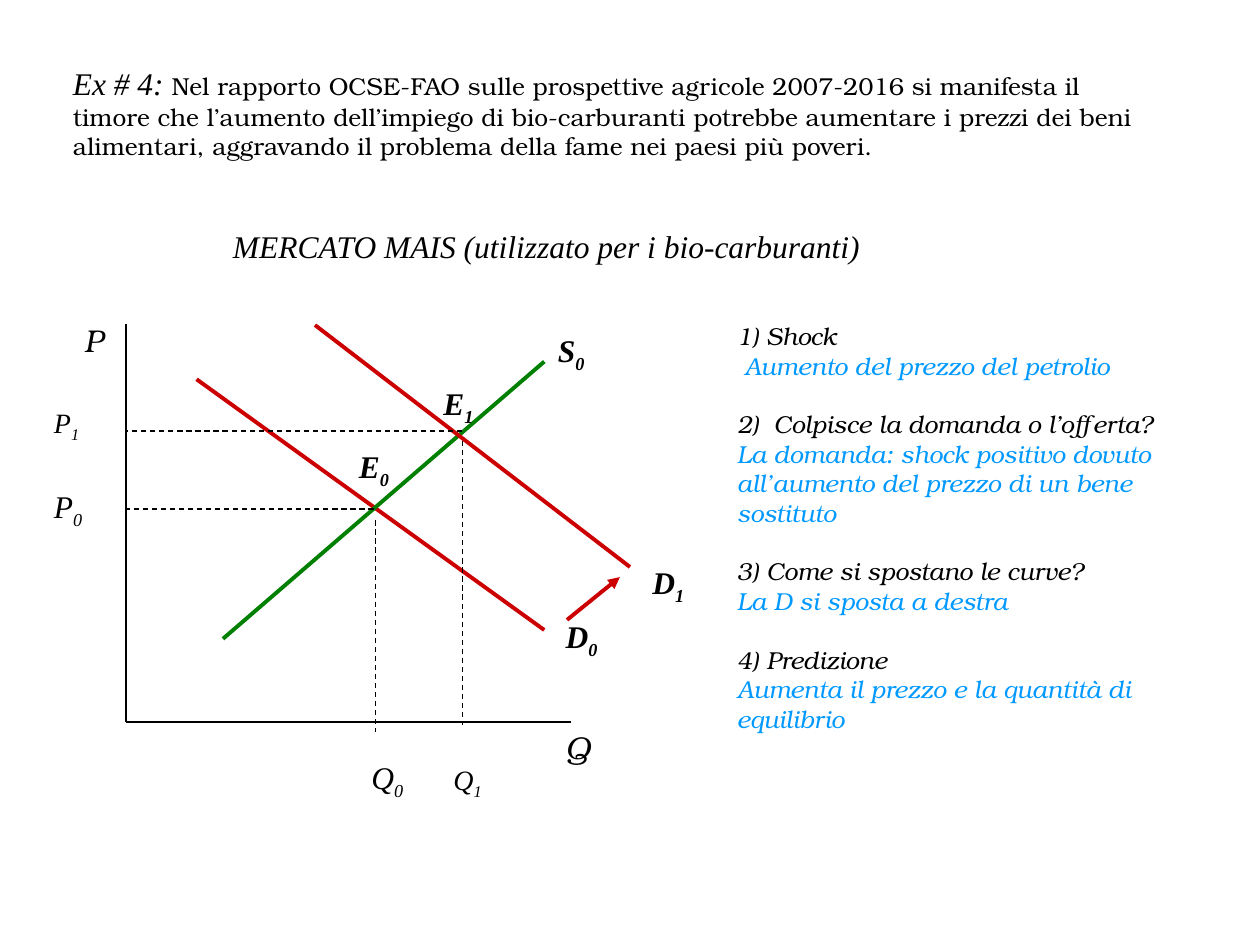
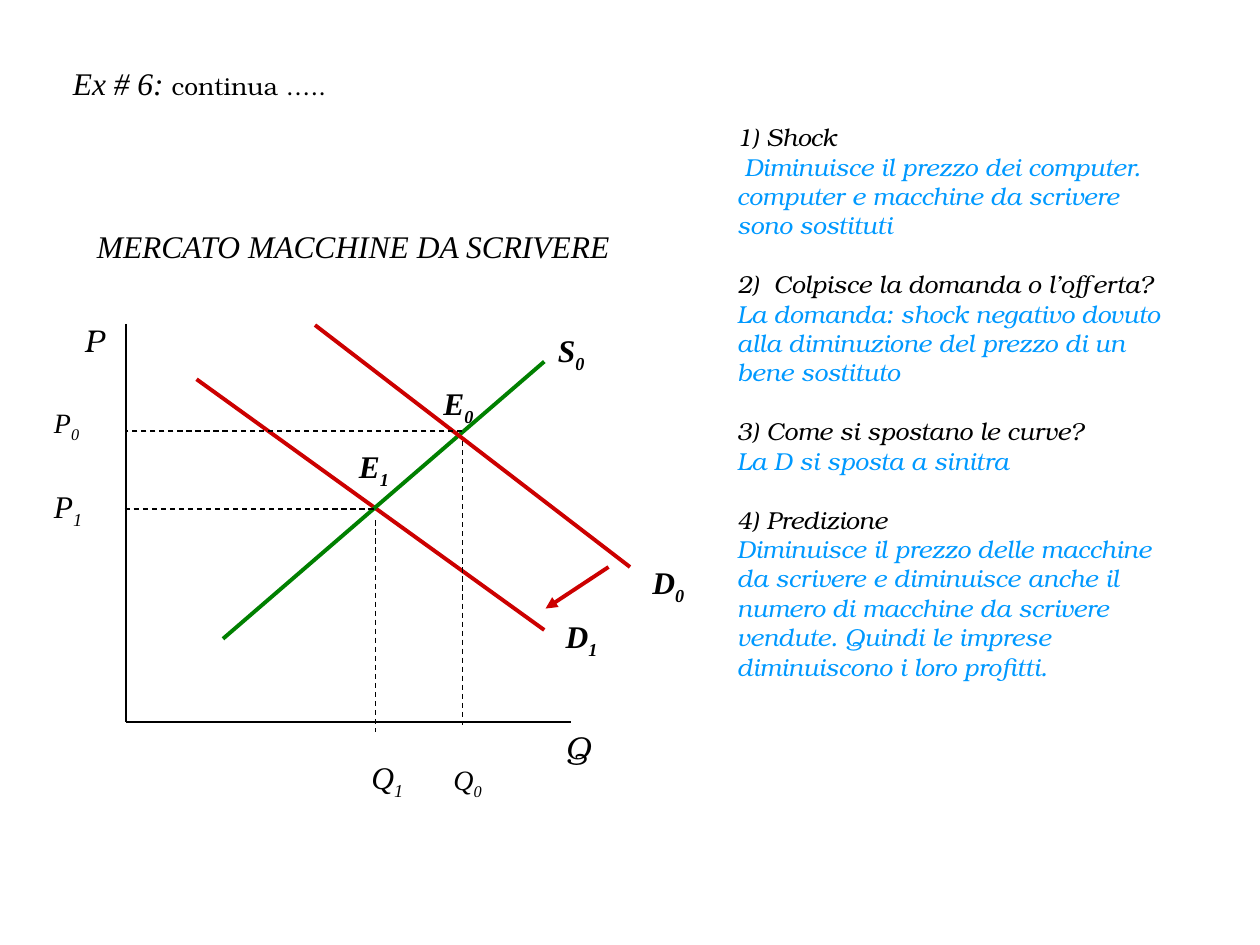
import pptx
import pptx.util
import pptx.dml.color
import pptx.enum.dml
import pptx.enum.shapes
import pptx.enum.text
import pptx.oxml
import pptx.oxml.ns

Inches, Pt = pptx.util.Inches, pptx.util.Pt
COLORS = {"ink": "000000", "answer": "0099FF", "demand": "CC0000", "supply": "008000"}
SERIF, BODY = "Times New Roman", "TeX Gyre Bonum"
BODY_SIZE, LABEL_SIZE, SMALL_SIZE = 14, 18, 16
QUESTION_GAP = 16.8

QUESTIONS = [
    "1) Shock",
    "2)  Colpisce la domanda o l’offerta?",
    "3) Come si spostano le curve?",
    "4) Predizione",
]

SLIDES = [
    {
        "exercise": "Ex # 4: ",
        "intro": "Nel rapporto OCSE-FAO sulle prospettive agricole 2007-2016 si manifesta il "
                 "timore che l’aumento dell’impiego di bio-carburanti potrebbe aumentare i prezzi "
                 "dei beni alimentari, aggravando il problema della fame nei paesi più poveri.",
        "intro_height": 0.87,
        "market": "MERCATO MAIS (utilizzato per i bio-carburanti)",
        "market_box": (1.75, 1.75, 5.19, 0.4),
        "answers": [
            [" Aumento del prezzo del petrolio"],
            ["La domanda: shock positivo dovuto all’aumento del prezzo di un bene sostituto"],
            ["La D si sposta a destra"],
            ["Aumenta il prezzo e la quantità di", "equilibrio"],
        ],
        "answers_box": (5.75, 2.5, 3.71, 3.36),
        "shift": ((4.5, 4.92), (4.92, 4.58)),
        "low": "0",
        "high": "1",
    },
    {
        "exercise": "Ex # 6: ",
        "intro": "continua …..",
        "intro_height": 0.4,
        "market": "MERCATO MACCHINE DA SCRIVERE",
        "market_box": (0.67, 1.75, 4.29, 0.4),
        "answers": [
            [" Diminuisce il prezzo dei computer. computer e macchine da scrivere sono sostituti"],
            ["La domanda: shock negativo dovuto alla diminuzione del prezzo di un bene sostituto"],
            ["La D si sposta a sinitra"],
            ["Diminuisce il prezzo delle macchine da scrivere e diminuisce anche il numero di "
             "macchine da scrivere vendute. Quindi le imprese diminuiscono i loro profitti."],
        ],
        "answers_box": (5.75, 0.92, 3.71, 4.52),
        "shift": ((4.83, 4.5), (4.33, 4.83)),
        "low": "1",
        "high": "0",
    },
]

AXES = [((1, 2.57), (1, 5.73)), ((1, 5.73), (4.53, 5.73))]
GUIDES = [
    ((2.98, 4.13), (2.98, 5.81)),
    ((0.99, 4.04), (2.98, 4.04)),
    ((3.67, 3.5), (3.67, 5.75)),
    ((3.67, 3.42), (1, 3.42)),
]
CURVES = [
    ((1.56, 3.01), (4.32, 5), "demand"),
    ((1.77, 5.07), (4.32, 2.87), "supply"),
    ((2.5, 2.58), (5, 4.5), "demand"),
]
AXIS_NAMES = [("P", 0.57, 2.5), ("Q", 4.39, 5.73)]
CURVE_LABELS = [
    ("S", "supply", (4.33, 2.58, 0.51, 0.4)),
    ("D", "low", (4.39, 4.85, 0.52, 0.4)),
    ("D", "high", (5.08, 4.42, 0.58, 0.4)),
    ("E", "low", (2.75, 3.5, 0.5, 0.4)),
    ("E", "high", (3.42, 3, 0.58, 0.4)),
]
VALUE_LABELS = [
    ("P", "low", (0.33, 3.82, 0.55, 0.4), LABEL_SIZE),
    ("Q", "low", (2.85, 5.97, 0.57, 0.4), LABEL_SIZE),
    ("P", "high", (0.33, 3.17, 0.41, 0.37), SMALL_SIZE),
    ("Q", "high", (3.5, 6, 0.5, 0.37), SMALL_SIZE),
]


def rgb(name):
    return pptx.dml.color.RGBColor.from_string(COLORS[name])


def add_box(s, box, wrap=True):
    tf = s.shapes.add_textbox(*map(Inches, box)).text_frame
    tf.word_wrap = wrap
    tf.auto_size = pptx.enum.text.MSO_AUTO_SIZE.SHAPE_TO_FIT_TEXT
    return tf


def add_run(p, text, font=SERIF, size=LABEL_SIZE, color="ink", bold=False, italic=True):
    r = p.add_run()
    r.text = text
    r.font.name, r.font.size = font, Pt(size)
    r.font.bold, r.font.italic = bold, italic
    r.font.color.rgb = rgb(color)
    return r


def add_label(s, letter, index, box, size=LABEL_SIZE, bold=False):
    p = add_box(s, box).paragraphs[0]
    add_run(p, letter, size=size, bold=bold)
    r = add_run(p, index, size=size, bold=bold)
    r._r.get_or_add_rPr().set("baseline", "-25000")


def add_line(s, start, end, color="ink", width=0.75, dashed=False, arrow=False):
    sp = s.shapes.add_connector(
        pptx.enum.shapes.MSO_CONNECTOR.STRAIGHT, *map(Inches, start + end))
    sp.line.color.rgb = rgb(color)
    sp.line.width = Pt(width)
    if dashed:
        sp.line.dash_style = pptx.enum.dml.MSO_LINE.DASH
    if arrow:
        tail = pptx.oxml.parse_xml(
            f'<a:tailEnd {pptx.oxml.ns.nsdecls("a")} type="triangle"/>')
        sp.line._get_or_add_ln().append(tail)
    sp._element.spPr.append(
        pptx.oxml.parse_xml(f'<a:effectLst {pptx.oxml.ns.nsdecls("a")}/>'))


def add_diagram(s, data):
    index = {"low": data["low"], "high": data["high"], "supply": "0"}
    for start, end in AXES:
        add_line(s, start, end)
    for start, end, color in CURVES:
        add_line(s, start, end, color, 2.25)
    for start, end in GUIDES:
        add_line(s, start, end, dashed=True)
    add_line(s, *data["shift"], "demand", 2.25, arrow=True)
    for name, x, y in AXIS_NAMES:
        add_run(add_box(s, (x, y, 0.44, 0.4)).paragraphs[0], name, BODY)
    for letter, level, box in CURVE_LABELS:
        add_label(s, letter, index[level], box, bold=True)
    for letter, level, box, size in VALUE_LABELS:
        add_label(s, letter, index[level], box, size)


def add_answers(s, data):
    tf = add_box(s, data["answers_box"])
    p = tf.paragraphs[0]
    for i, (question, answers) in enumerate(zip(QUESTIONS, data["answers"])):
        if i:
            p = tf.add_paragraph()
            p.space_before = Pt(QUESTION_GAP)
        add_run(p, question, BODY, BODY_SIZE)
        for answer in answers:
            add_run(tf.add_paragraph(), answer, BODY, BODY_SIZE, "answer")


def add_exercise(prs, data):
    s = prs.slides.add_slide(prs.slide_layouts[6])
    p = add_box(s, (0.48, 0.46, 8.77, data["intro_height"])).paragraphs[0]
    add_run(p, data["exercise"])
    add_run(p, data["intro"], BODY, BODY_SIZE, italic=False)
    add_answers(s, data)
    add_diagram(s, data)
    add_run(add_box(s, data["market_box"], wrap=False).paragraphs[0], data["market"])


def main():
    prs = pptx.Presentation()
    prs.slide_width, prs.slide_height = Inches(10), Inches(7.5)
    for data in SLIDES:
        add_exercise(prs, data)
    prs.save("out.pptx")


if __name__ == "__main__":
    main()
